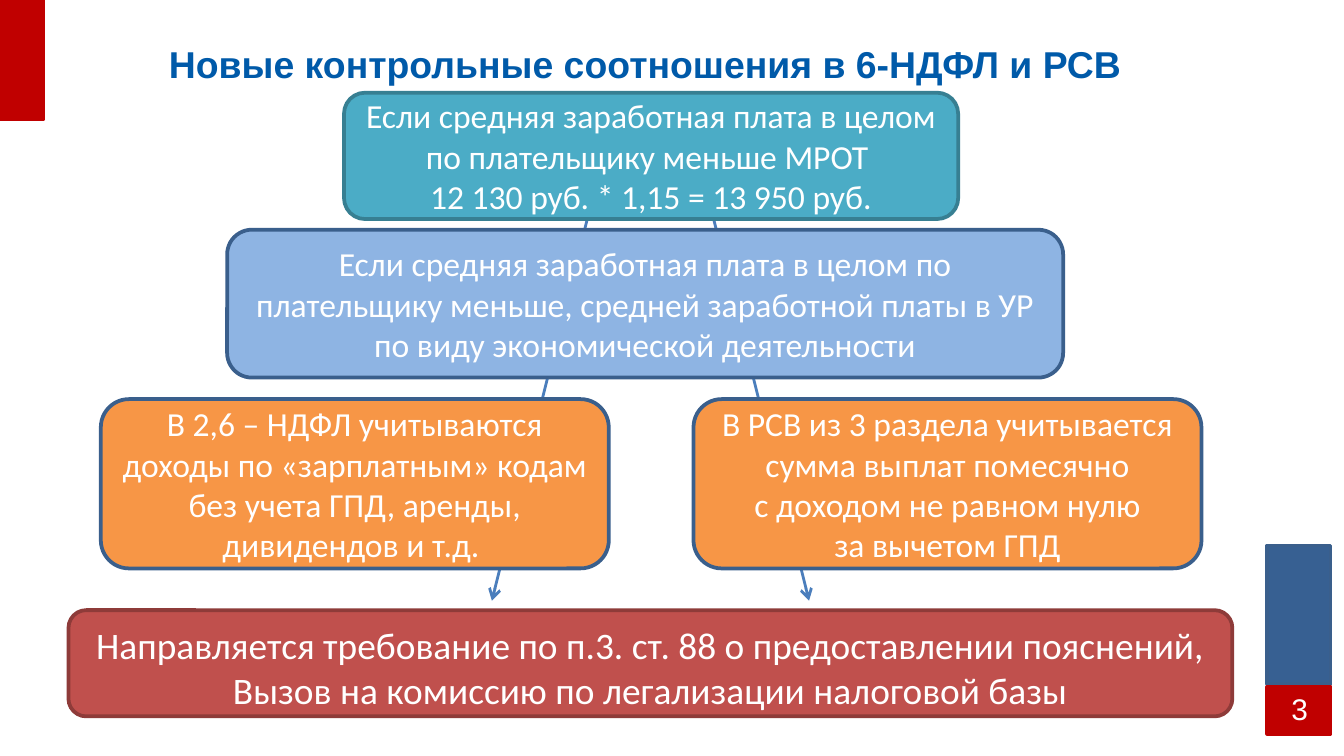
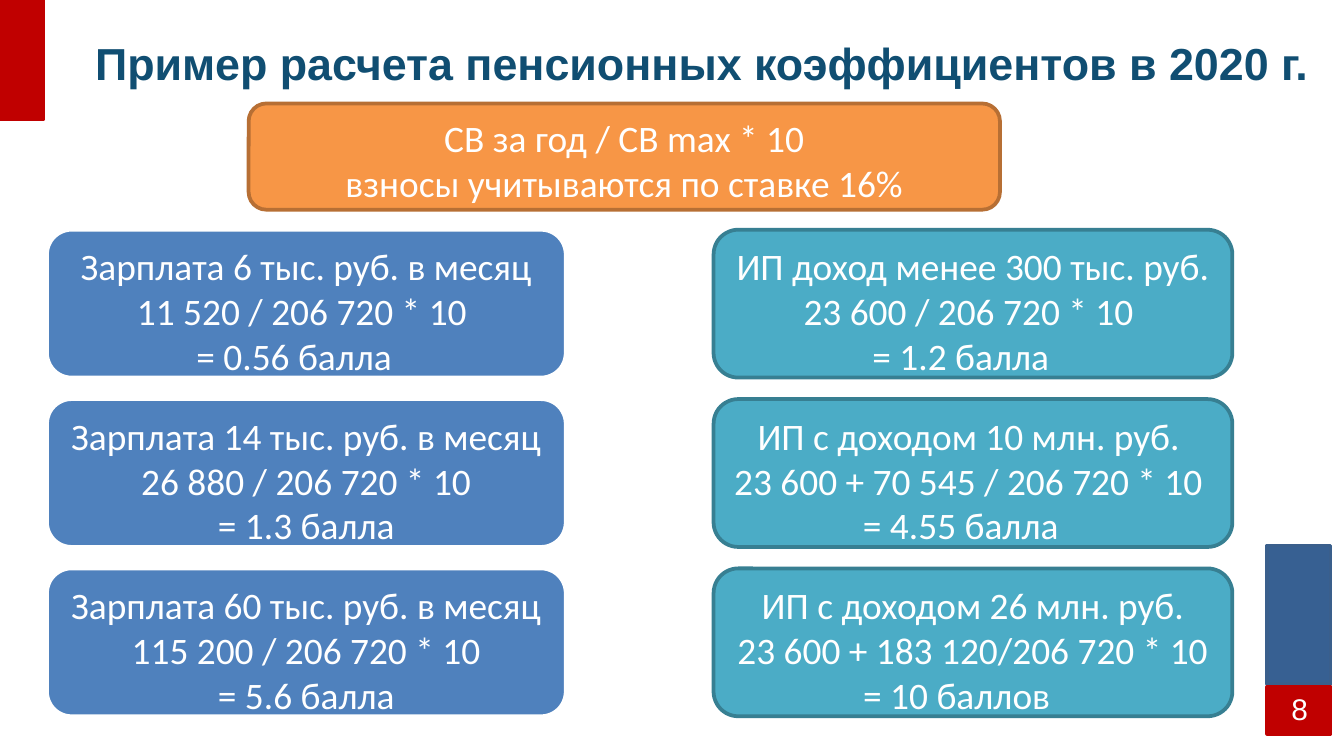
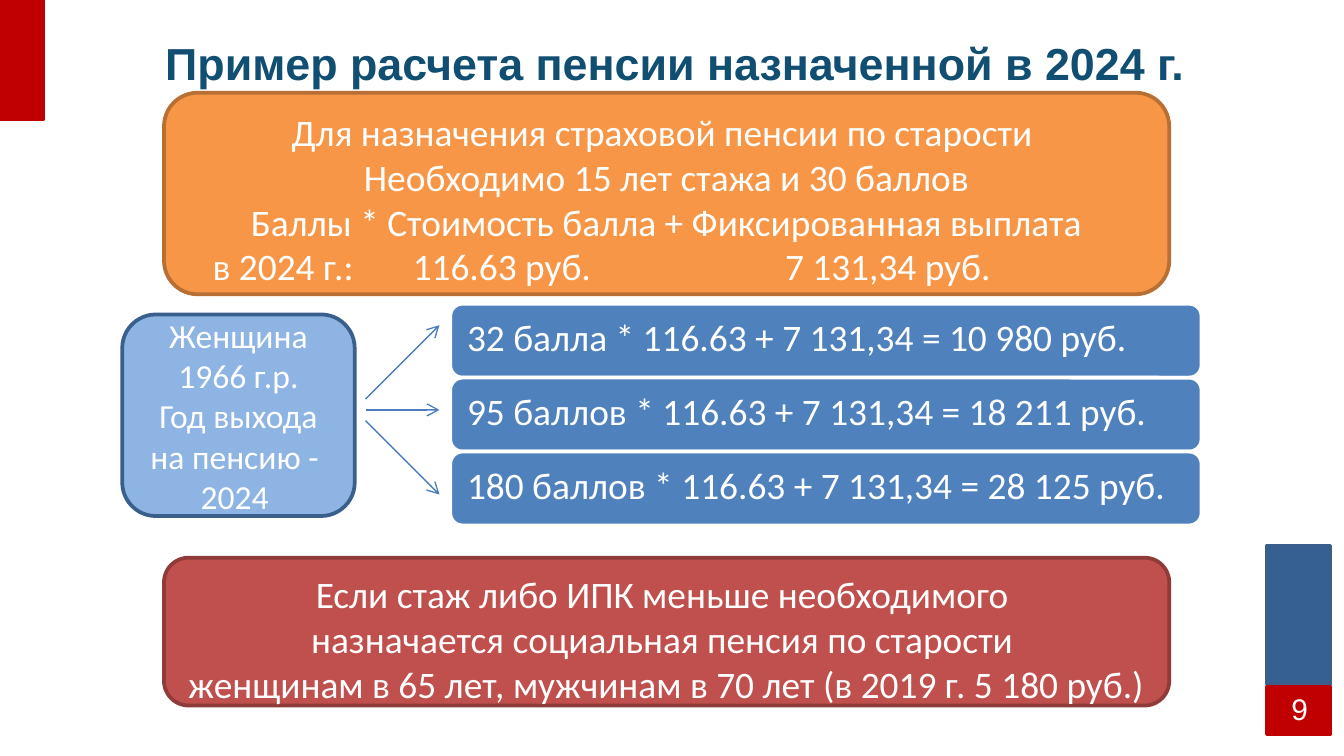
from lxml.etree import SubElement
from pptx import Presentation
from pptx.dml.color import RGBColor
from pptx.enum.shapes import MSO_CONNECTOR, MSO_SHAPE
from pptx.enum.text import MSO_ANCHOR, PP_ALIGN
from pptx.oxml.ns import qn
from pptx.util import Inches, Pt

# Slide size, 16:9
WIDE = Inches(10)
HIGH = WIDE * 9 // 16

# Colours
WHITE = RGBColor(0xFF, 0xFF, 0xFF)
RED = RGBColor(0xC0, 0x00, 0x00)
NAVY = RGBColor(0x37, 0x60, 0x92)
EDGE = RGBColor(0x3A, 0x5F, 0x8C)
ARROW = RGBColor(0x4B, 0x7E, 0xBC)
BLUE = RGBColor(0x4F, 0x81, 0xBD)
SKY = RGBColor(0x8E, 0xB4, 0xE3)
TEAL = RGBColor(0x4B, 0xAC, 0xC6)
ORANGE = RGBColor(0xF7, 0x96, 0x46)
BRICK = RGBColor(0xC0, 0x50, 0x4D)
ROYAL = RGBColor(0x00, 0x5A, 0xA9)
INK = RGBColor(0x10, 0x4E, 0x72)

# Box styles: fill, line
PLAIN = (BLUE, WHITE)
PALE = (SKY, EDGE)
SEA = (TEAL, RGBColor(0x37, 0x7F, 0x92))
WARM = (ORANGE, RGBColor(0xB7, 0x6F, 0x34))
SIDE = (ORANGE, EDGE)
ALERT = (BRICK, RGBColor(0x8E, 0x3B, 0x39))

# Shared bands: place, style
BANDS = [
    ((9.43, 4.06, 0.47, 1.03), (NAVY, EDGE)),
    ((9.43, 5.11, 0.47, 0.35), (RED, RED)),
    ((0, 0, 0.32, 0.89), (RED, RED)),
]

# Control ratios
RATIO = "Новые контрольные соотношения в 6-НДФЛ и РСВ "
WAGE = """Если средняя заработная плата в целом по плательщику меньше МРОТ 
12 130 руб. * 1,15 = 13 950 руб."""
REGION = ("Если средняя заработная плата в целом по плательщику меньше, "
          "средней заработной платы в УР по виду экономической деятельности")
SOURCES = [
    """В 2,6 – НДФЛ учитываются
доходы по «зарплатным» кодам без учета ГПД, аренды, дивидендов и т.д. """,
    """В РСВ из 3 раздела учитывается
сумма выплат помесячно
с доходом не равном нулю
за вычетом ГПД""",
]
DEMAND = """Направляется требование по п.3. ст. 88 о предоставлении пояснений,
Вызов на комиссию по легализации налоговой базы"""

# Pension points: lines of each case, right indent of its last line
POINTS = "Пример расчета пенсионных коэффициентов в 2020 г."
RULE = """СВ за год / СВ max * 10
взносы учитываются по ставке 16%"""
STAFF = [
    ("Зарплата 6 тыс. руб. в месяц\n11 520 / 206 720 * 10 \n= 0.56 балла", 0.18),
    ("Зарплата 14 тыс. руб. в месяц\n26 880 / 206 720 * 10\n= 1.3 балла", 0),
    ("Зарплата 60 тыс. руб. в месяц\n115 200 / 206 720 * 10\n= 5.6 балла", 0),
]
OWNERS = [
    ("ИП доход менее 300 тыс. руб.\n23 600 / 206 720 * 10 \n= 1.2 балла", 0.18),
    ("ИП с доходом 10 млн. руб. \n23 600 + 70 545 / 206 720 * 10 \n= 4.55 балла", 0.18),
    ("ИП с доходом 26 млн. руб.\n23 600 + 183 120/206 720 * 10 \n= 10 баллов", 0.24),
]

# Pension amount
AMOUNT = "Пример расчета пенсии назначенной в 2024 г."
TERMS = """Для назначения страховой пенсии по старости 
Необходимо 15 лет стажа и 30 баллов
Баллы * Стоимость балла + Фиксированная выплата
\tв 2024 г.:\t116.63 руб.\t7 131,34 руб."""
TABS = [0.19, 1.68, 4.45]
PERSON = """Женщина 1966 г.р.
Год выхода на пенсию - 
2024 """
SUMS = [
    "32 балла * 116.63 + 7 131,34 = 10 980 руб.",
    "95 баллов * 116.63 + 7 131,34 = 18 211 руб.",
    "180 баллов * 116.63 + 7 131,34 = 28 125 руб.",
]
SOCIAL = """Если стаж либо ИПК меньше необходимого 
назначается социальная пенсия по старости 
женщинам в 65 лет, мужчинам в 70 лет (в 2019 г. 5 180 руб.)"""


def write(shape, text, size, color=WHITE, face="Calibri", bold=False,
          align=PP_ALIGN.CENTER, anchor=MSO_ANCHOR.MIDDLE):
    frame = shape.text_frame
    frame.word_wrap = True
    frame.vertical_anchor = anchor
    frame.text = text
    for para in frame.paragraphs:
        para.alignment = align
        for run in para.runs:
            font = run.font
            font.name, font.size, font.bold = face, Pt(size), bold
            font.color.rgb = color
    return frame


def draw(slide, kind, place, style):
    shape = slide.shapes.add_shape(kind, *map(Inches, place))
    shape.shadow.inherit = False
    shape.fill.solid()
    shape.fill.fore_color.rgb, shape.line.color.rgb = style
    shape.line.width = Pt(2)
    return shape


def box(slide, place, style, text, size=20, anchor=MSO_ANCHOR.TOP,
        align=PP_ALIGN.CENTER):
    shape = draw(slide, MSO_SHAPE.ROUNDED_RECTANGLE, place, style)
    return write(shape, text, size, anchor=anchor, align=align)


def label(slide, place, text, size, color, bold, side=0):
    shape = slide.shapes.add_textbox(*map(Inches, place))
    frame = write(shape, text, size, color, "Arial", bold)
    frame.margin_left = frame.margin_right = Inches(side)


def arrow(slide, start, end, width):
    line = slide.shapes.add_connector(
        MSO_CONNECTOR.STRAIGHT, *map(Inches, start + end))
    line.line.color.rgb = ARROW
    line.line.width = Pt(width)
    props = line._element.spPr
    SubElement(props.find(qn("a:ln")), qn("a:tailEnd"), type="arrow")
    SubElement(props, qn("a:effectLst"))


def start(deck, number, title, place, size=24, color=INK, side=0):
    slide = deck.slides.add_slide(deck.slide_layouts[6])
    for spot, style in BANDS:
        draw(slide, MSO_SHAPE.RECTANGLE, spot, style)
    label(slide, place, title, size, color, True, side)
    label(slide, (9.41, 5.12, 0.52, 0.3), str(number), 16, WHITE, False)
    return slide


def ratios(deck):
    slide = start(deck, 3, RATIO, (0.98, 0.14, 7.72, 0.66), 20, ROYAL, 0.1)
    # Arrows spread from the centre, behind the boxes
    for way in (1, -1):
        arrow(slide, (4.84 + way * 0.47, 1.63), (4.84 + way * 1.18, 4.47), 1.5)
    mid = MSO_ANCHOR.MIDDLE
    box(slide, (2.56, 0.69, 4.57, 0.94), SEA, WAGE, 18, mid)
    box(slide, (1.69, 1.71, 6.22, 1.1), PALE, REGION, 18, mid)
    for i, text in enumerate(SOURCES):
        box(slide, (0.75 + i * 4.41, 2.97, 3.78, 1.26), SIDE, text, 18, mid)
    box(slide, (0.51, 4.54, 8.66, 0.79), ALERT, DEMAND)


def points(deck):
    slide = start(deck, 8, POINTS, (0.63, 0.09, 9.18, 0.75))
    box(slide, (1.85, 0.77, 5.59, 0.79), WARM, RULE)
    # Two columns of cases
    for left, style, cases in ((5.31, SEA, OWNERS), (0.35, PLAIN, STAFF)):
        for i, (text, pad) in enumerate(cases):
            frame = box(slide, (left, 1.71 + i * 1.26, 3.86, 1.1), style, text)
            if pad:
                props = frame.paragraphs[-1]._p.get_or_add_pPr()
                props.set("marR", str(Inches(pad)))


def amount(deck):
    slide = start(deck, 9, AMOUNT, (0.63, 0.09, 8.78, 0.75))
    # Formula, its values set on tab stops
    last = box(slide, (1.22, 0.69, 7.48, 1.5), WARM, TERMS).paragraphs[-1]
    last.alignment = PP_ALIGN.LEFT
    stops = SubElement(last._p.get_or_add_pPr(), qn("a:tabLst"))
    for stop in TABS:
        SubElement(stops, qn("a:tab"), pos=str(Inches(stop)), algn="l")
    # Person, arrows and sums
    box(slide, (0.91, 2.34, 1.73, 1.5), PALE, PERSON, 18, MSO_ANCHOR.MIDDLE)
    for i, text in enumerate(SUMS):
        box(slide, (3.35, 2.26 + i * 0.55, 5.59, 0.55), PLAIN, text,
            align=PP_ALIGN.LEFT)
        way = i - 1
        arrow(slide, (2.72, 3.05 + way * 0.08), (3.27, 3.05 + way * 0.63), 0.75)
    box(slide, (1.22, 4.15, 7.48, 1.1), ALERT, SOCIAL)


def main():
    deck = Presentation()
    deck.slide_width, deck.slide_height = WIDE, HIGH
    for build in (ratios, points, amount):
        build(deck)
    deck.save("out.pptx")


if __name__ == "__main__":
    main()
